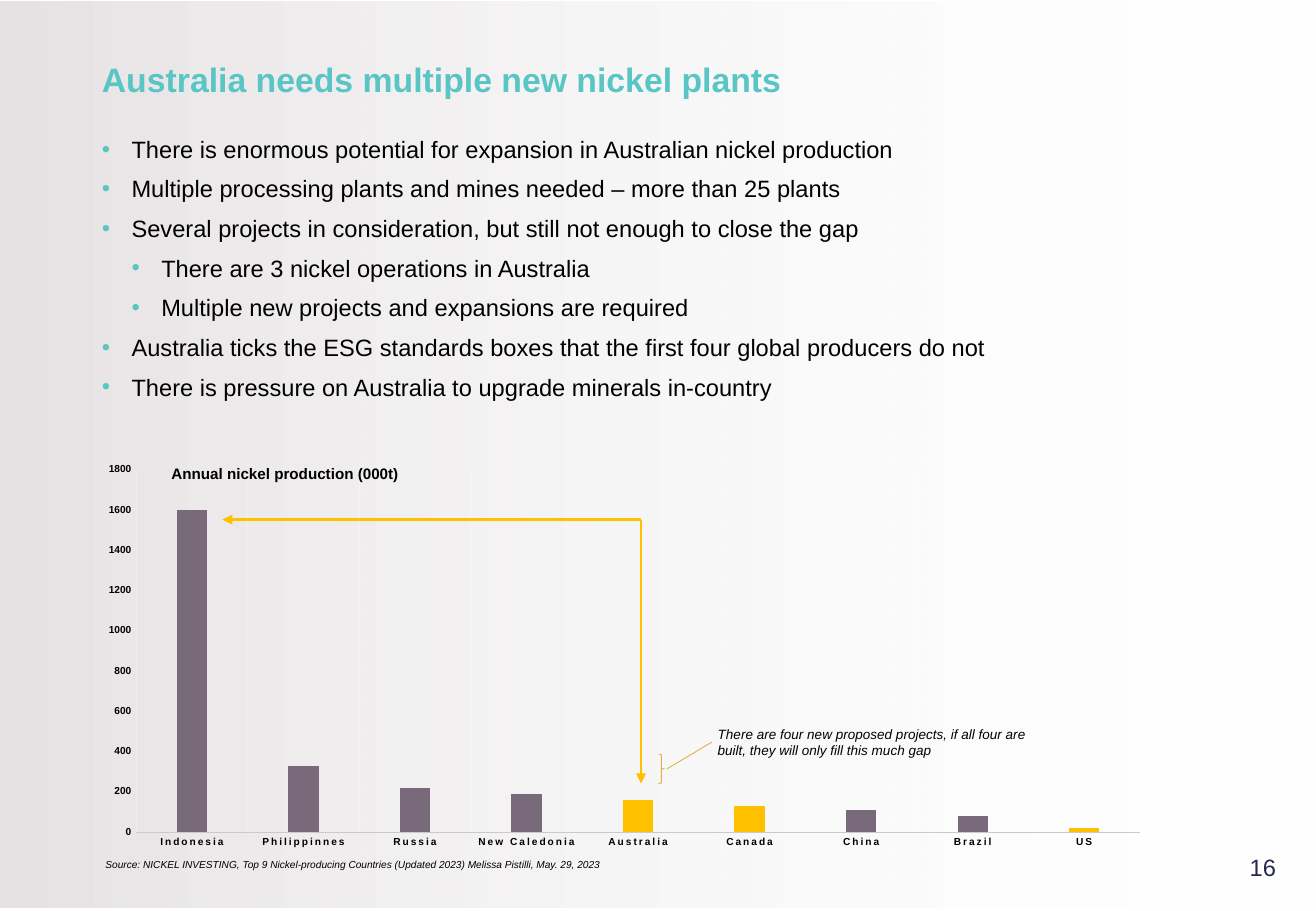
from dataclasses import dataclass

from lxml.etree import SubElement
from pptx import Presentation
from pptx.chart.data import CategoryChartData
from pptx.dml.color import RGBColor
from pptx.enum.chart import XL_CHART_TYPE, XL_TICK_MARK
from pptx.enum.shapes import MSO_CONNECTOR, MSO_SHAPE
from pptx.enum.text import MSO_ANCHOR, PP_ALIGN
from pptx.oxml import parse_xml
from pptx.oxml.ns import nsdecls, qn
from pptx.util import Pt


@dataclass(frozen=True)
class Theme:
    font: str = "Arial"
    teal: str = "59C5C5"
    ink: str = "000000"
    navy: str = "242852"
    white: str = "FFFFFF"
    haze: str = "E7E3E4"
    plum: str = "78697B"
    gold: str = "FFC000"
    ochre: str = "DEB343"
    axis: str = "CFC7CA"
    head: float = 20
    body: float = 14
    label: float = 9
    note: float = 8
    small: float = 6


def rgb(code):
    return RGBColor.from_string(code)


def fade(fill, percent):
    """Set the opacity of the first colour found inside an XML element."""
    tone = next(fill.iter(qn("a:srgbClr")))
    SubElement(tone, qn("a:alpha"), val=str(percent * 1000))


class Page:
    def __init__(self, slide, theme):
        self.slide = slide
        self.shapes = slide.shapes
        self.theme = theme

    def style(self, font, size, color, bold=False, italic=False):
        font.name = self.theme.font
        font.size = Pt(size)
        font.color.rgb = rgb(color)
        font.bold = bold
        font.italic = italic

    def backdrop(self, box):
        rect = self.shapes.add_shape(MSO_SHAPE.RECTANGLE, *map(Pt, box))
        rect.shadow.inherit = False
        rect.line.fill.background()
        rect.fill.gradient()
        rect.fill.gradient_angle = 180
        stops = rect.fill.gradient_stops
        for stop, tone, place in zip(stops, (self.theme.white, self.theme.haze), (0, 1)):
            stop.color.rgb = rgb(tone)
            stop.position = place
        fade(rect.fill._xPr, 16)

    def text(self, box, words, size, color=None, bold=False, italic=False,
             anchor=MSO_ANCHOR.TOP, align=PP_ALIGN.LEFT):
        frame = self.shapes.add_textbox(*map(Pt, box)).text_frame
        frame.word_wrap = True
        frame.vertical_anchor = anchor
        frame.text = words
        for para in frame.paragraphs:
            para.alignment = align
            for run in para.runs:
                self.style(run.font, size, color or self.theme.ink, bold, italic)
        return frame

    def bullets(self, box, items):
        """Write (level, words) pairs as a bulleted list."""
        words = "\n".join(item for _, item in items)
        frame = self.text(box, words, self.theme.body)
        for para, (level, _) in zip(frame.paragraphs, items):
            para.level = level
            para.space_after = Pt(6.7)
            props = para._p.get_or_add_pPr()
            props.set("marL", str(Pt(17.6 * (level + 1))))
            props.set("indent", str(Pt(-17.6)))
            tone = SubElement(props, qn("a:buClr"))
            SubElement(tone, qn("a:srgbClr"), val=self.theme.teal)
            SubElement(props, qn("a:buFont"), typeface=self.theme.font)
            SubElement(props, qn("a:buChar"), char="•")

    def line(self, start, end, color, width, arrow=False):
        link = self.shapes.add_connector(
            MSO_CONNECTOR.STRAIGHT, *map(Pt, (*start, *end)))
        link.line.color.rgb = rgb(color)
        link.line.width = Pt(width)
        if arrow:
            SubElement(link.line._get_or_add_ln(), qn("a:tailEnd"), type="triangle")
        SubElement(link._element.spPr, qn("a:effectLst"))

    def brace(self, box):
        mark = self.shapes.add_shape(MSO_SHAPE.RIGHT_BRACE, *map(Pt, box))
        mark.shadow.inherit = False
        mark.fill.background()
        mark.line.color.rgb = rgb(self.theme.ochre)
        mark.line.width = Pt(0.5)

    def columns(self, box, data, marked):
        """Draw a column chart with the marked categories in gold."""
        theme = self.theme
        source = CategoryChartData()
        source.categories = list(data)
        source.add_series("Series 1", list(data.values()))
        chart = self.shapes.add_chart(
            XL_CHART_TYPE.COLUMN_CLUSTERED, *map(Pt, box), source).chart
        chart.has_legend = chart.has_title = False
        self.style(chart.font, theme.small, theme.ink, True)

        plot = chart.plots[0]
        plot.gap_width = 269
        plot.overlap = -20
        plot.vary_by_categories = False
        bars = plot.series[0]
        bars.format.fill.solid()
        bars.format.fill.fore_color.rgb = rgb(theme.plum)
        for spot, name in enumerate(data):
            if name in marked:
                fill = bars.points[spot].format.fill
                fill.solid()
                fill.fore_color.rgb = rgb(theme.gold)

        for axis in (chart.category_axis, chart.value_axis):
            axis.major_tick_mark = axis.minor_tick_mark = XL_TICK_MARK.NONE
            self.style(axis.tick_labels.font, theme.small, theme.ink, True)
        cats, scale = chart.category_axis, chart.value_axis
        cats.tick_labels.font._element.set("spc", "120")
        cats.format.line.color.rgb = rgb(theme.axis)
        cats.format.line.width = Pt(0.25)
        cats.has_major_gridlines = True
        grid = cats.major_gridlines.format.line
        grid.color.rgb = rgb(theme.white)
        grid.width = Pt(0.75)
        fade(grid._get_or_add_ln(), 25)
        scale.has_major_gridlines = False
        scale.format.line.fill.background()
        scale.minimum_scale, scale.maximum_scale, scale.major_unit = 0, 1800, 200
        self.place(chart, 0.04, 0.03, 0.94, 0.91)

    def place(self, chart, left, top, width, height):
        """Fix the inner plot area, in fractions of the chart."""
        area = chart._chartSpace.chart.plotArea
        for old in area.findall(qn("c:layout")):
            area.remove(old)
        area.insert(0, parse_xml(
            f'<c:layout {nsdecls("c")}><c:manualLayout>'
            '<c:layoutTarget val="inner"/><c:xMode val="edge"/><c:yMode val="edge"/>'
            f'<c:x val="{left}"/><c:y val="{top}"/><c:w val="{width}"/><c:h val="{height}"/>'
            '</c:manualLayout></c:layout>'))


POINTS = [
    (0, "There is enormous potential for expansion in Australian nickel production"),
    (0, "Multiple processing plants and mines needed – more than 25 plants"),
    (0, "Several projects in consideration, but still not enough to close the gap"),
    (1, "There are 3 nickel operations in Australia"),
    (1, "Multiple new projects and expansions are required"),
    (0, "Australia ticks the ESG standards boxes that the first four global producers do not"),
    (0, "There is pressure on Australia to upgrade minerals in-country"),
]
OUTPUT = {"Indonesia": 1600, "Philippinnes": 330, "Russia": 220, "New Caledonia": 190,
          "Australia": 160, "Canada": 130, "China": 110, "Brazil": 80, "US": 20}


def main():
    deck = Presentation()
    deck.slide_width, deck.slide_height = Pt(780), Pt(540)
    theme = Theme()
    page = Page(deck.slides.add_slide(deck.slide_layouts[6]), theme)

    page.backdrop((0, 0.7, 780, 537))
    title = page.text((53.3, 28.8, 672.5, 38.9), "Australia needs multiple new nickel plants",
                      theme.head, theme.teal, bold=True, anchor=MSO_ANCHOR.MIDDLE)
    title.paragraphs[0].line_spacing = 0.9
    page.bullets((53.3, 76.3, 705, 180), POINTS)
    page.text((726.5, 494.6, 44, 39), "16", theme.body, theme.navy,
              anchor=MSO_ANCHOR.MIDDLE, align=PP_ALIGN.CENTER)
    page.text((55.4, 505.4, 345, 14.4),
              "Source: NICKEL INVESTING, Top 9 Nickel-producing Countries (Updated 2023) "
              "Melissa Pistilli, May. 29, 2023", theme.small, italic=True)

    page.columns((55.4, 271.4, 633, 236), OUTPUT, {"Australia", "Canada", "US"})
    page.text((94.5, 271.4, 194, 18), "Annual nickel production (000t)", theme.label, bold=True)
    corner = (380, 308)
    for tip in ((131.8, 308), (380, 464.4)):
        page.line(corner, tip, theme.gold, 1.5, arrow=True)

    page.text((418.3, 427, 215.3, 26.6),
              "There are four new proposed projects, if all four are built, "
              "they will only fill this much gap", theme.note, italic=True)
    page.brace((390.2, 447.1, 3.6, 17.3))
    page.line((395.3, 455.8), (421.9, 439.9), theme.ochre, 0.5)
    deck.save("out.pptx")


if __name__ == "__main__":
    main()
